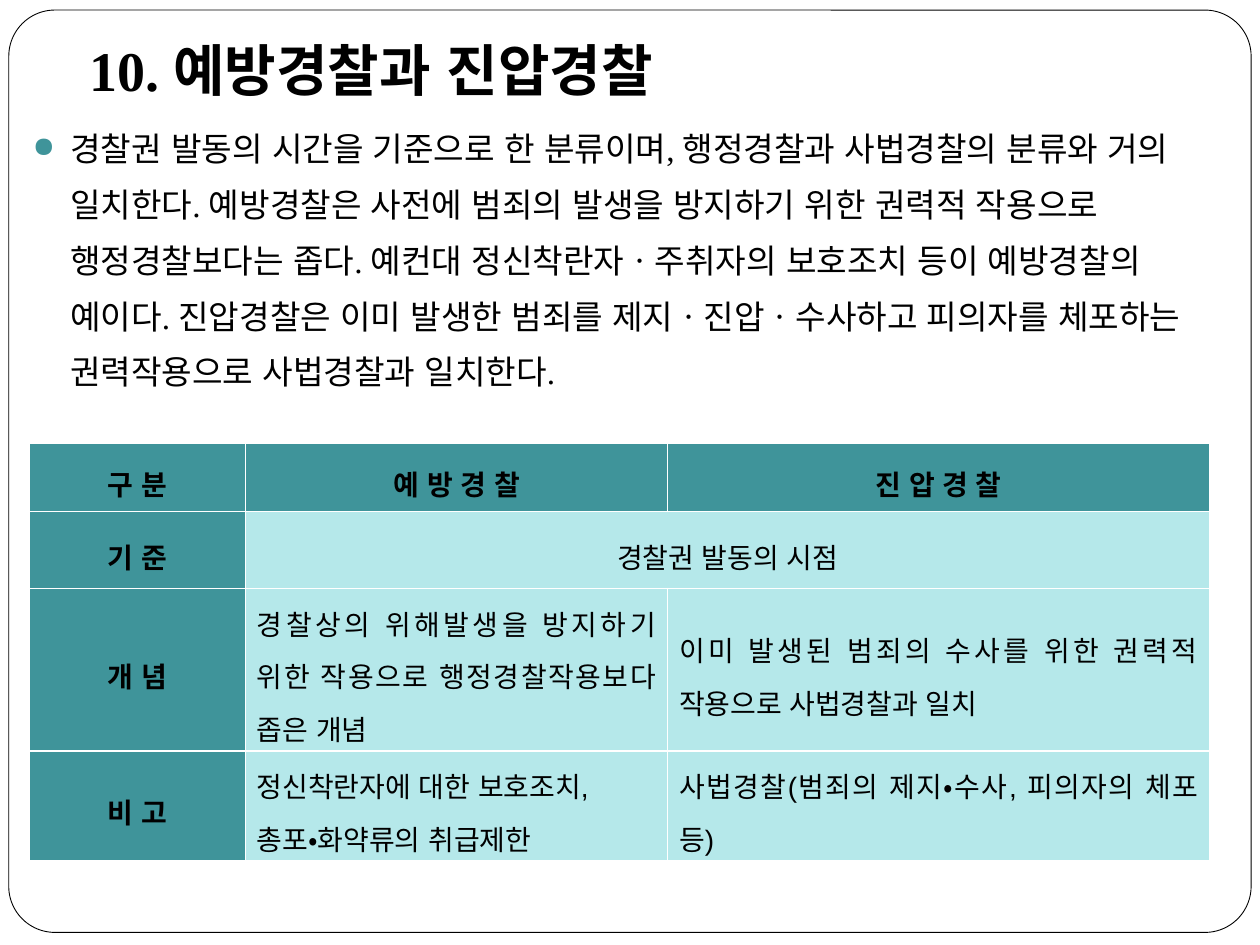
from lxml.etree import SubElement
from pptx import Presentation
from pptx.dml.color import RGBColor
from pptx.enum.lang import MSO_LANGUAGE_ID
from pptx.enum.shapes import MSO_SHAPE
from pptx.enum.text import MSO_ANCHOR, PP_ALIGN
from pptx.oxml import parse_xml
from pptx.oxml.ns import nsdecls, qn
from pptx.util import Inches, Pt

COLORS = {"teal": "3F949A", "pale": "B5E8EA", "black": "000000", "white": "FFFFFF"}

TITLE = "10. 예방경찰과 진압경찰"
BODY = (
    "경찰권 발동의 시간을 기준으로 한 분류이며, 행정경찰과 사법경찰의 분류와 거의 일치한다. "
    "예방경찰은 사전에 범죄의 발생을 방지하기 위한 권력적 작용으로 행정경찰보다는 좁다. "
    "예컨대 정신착란자ㆍ주취자의 보호조치 등이 예방경찰의 예이다. "
    "진압경찰은 이미 발생한 범죄를 제지ㆍ진압ㆍ수사하고 피의자를 체포하는 "
    "권력작용으로 사법경찰과 일치한다."
)
COLUMN_WIDTHS = [1.72, 3.35, 4.3]
ROW_HEIGHTS = [0.54, 0.61, 1.29, 0.87]
ROWS = [
    ["구 분", "예 방 경 찰", "진 압 경 찰"],
    ["기 준", "경찰권 발동의 시점", ""],
    ["개 념", "경찰상의 위해발생을 방지하기 위한 작용으로 행정경찰작용보다 좁은 개념",
     "이미 발생된 범죄의 수사를 위한 권력적 작용으로 사법경찰과 일치"],
    ["비 고", "정신착란자에 대한 보호조치,\n총포‧화약류의 취급제한",
     "사법경찰(범죄의 제지‧수사, 피의자의 체포 등)"],
]


def rgb(name):
    return RGBColor.from_string(COLORS[name])


def write_text(para, text, size, font="Times New Roman", bold=False, align=PP_ALIGN.LEFT,
               spacing=1.0, before=0, margin=0, right=0, indent=0):
    para.alignment = align
    para.line_spacing = spacing
    para.space_before = Pt(before)
    properties = para._p.get_or_add_pPr()
    for name, length in (("marL", margin), ("marR", right), ("indent", indent)):
        properties.set(name, str(Inches(length)))
    span = para.add_run()
    span.text = text
    span.font.name = font
    span.font.size = Pt(size)
    span.font.bold = bold
    span.font.color.rgb = rgb("black")
    span.font.language_id = MSO_LANGUAGE_ID.KOREAN


def add_bullet(para, char, color, percent):
    properties = para._p.get_or_add_pPr()
    bullet_color = SubElement(properties, qn("a:buClr"))
    SubElement(bullet_color, qn("a:srgbClr"), val=COLORS[color])
    SubElement(properties, qn("a:buSzPct"), val=str(percent * 1000))
    SubElement(properties, qn("a:buChar"), char=char)


def add_frame(page):
    frame = page.shapes.add_shape(MSO_SHAPE.ROUNDED_RECTANGLE, Inches(0.07), Inches(0.08),
                                  Inches(9.86), Inches(7.32))
    frame.adjustments[0] = 0.05
    frame.shadow.inherit = False
    frame.fill.solid()
    frame.fill.fore_color.rgb = rgb("white")
    frame.line.color.rgb = rgb("black")
    frame.line.width = Pt(0.5)


def add_explanation(page):
    box = page.shapes.add_textbox(Inches(0.16), Inches(0.23), Inches(9.61), Inches(7.03))
    box.text_frame.word_wrap = True
    write_text(box.text_frame.paragraphs[0], TITLE, 32, bold=True, before=5.8, margin=0.45)
    para = box.text_frame.add_paragraph()
    write_text(para, BODY, 19, spacing=1.4, before=5.8, margin=0.3, indent=-0.3)
    add_bullet(para, "●", "teal", 85)


def add_borders(cell, color, width):
    properties = cell._tc.get_or_add_tcPr()
    for position, side in enumerate(("lnL", "lnR", "lnT", "lnB")):
        properties.insert(position, parse_xml(
            f'<a:{side} {nsdecls("a")} w="{Pt(width)}"><a:solidFill>'
            f'<a:srgbClr val="{COLORS[color]}"/></a:solidFill></a:{side}>'))


def format_cell(cell, text, heading, centered):
    cell.fill.solid()
    cell.fill.fore_color.rgb = rgb("teal" if heading else "pale")
    cell.vertical_anchor = MSO_ANCHOR.MIDDLE
    cell.margin_left = cell.margin_right = Inches(0.02)
    cell.margin_top = cell.margin_bottom = Inches(0.02)
    add_borders(cell, "white", 1)
    if cell.is_spanned:
        return
    for number, line in enumerate(text.split("\n")):
        para = cell.text_frame.add_paragraph() if number else cell.text_frame.paragraphs[0]
        write_text(para, line, 16, font="Arial", bold=heading, spacing=1.3, margin=0.07,
                   right=0.07, align=PP_ALIGN.CENTER if centered else PP_ALIGN.JUSTIFY)


def add_comparison(page):
    table = page.shapes.add_table(len(ROWS), len(COLUMN_WIDTHS), Inches(0.23), Inches(3.52),
                                  Inches(sum(COLUMN_WIDTHS)), Inches(sum(ROW_HEIGHTS))).table
    for column, width in zip(table.columns, COLUMN_WIDTHS):
        column.width = Inches(width)
    for row, height in zip(table.rows, ROW_HEIGHTS):
        row.height = Inches(height)
    # One criterion is shared by both kinds of police
    table.cell(1, 1).merge(table.cell(1, 2))
    for row, texts in enumerate(ROWS):
        for column, text in enumerate(texts):
            cell = table.cell(row, column)
            heading = row == 0 or column == 0
            format_cell(cell, text, heading, heading or cell.is_merge_origin)


def main():
    deck = Presentation()
    deck.slide_width, deck.slide_height = Inches(10), Inches(7.5)
    page = deck.slides.add_slide(deck.slide_layouts[6])
    add_frame(page)
    add_explanation(page)
    add_comparison(page)
    deck.save("out.pptx")


if __name__ == "__main__":
    main()
